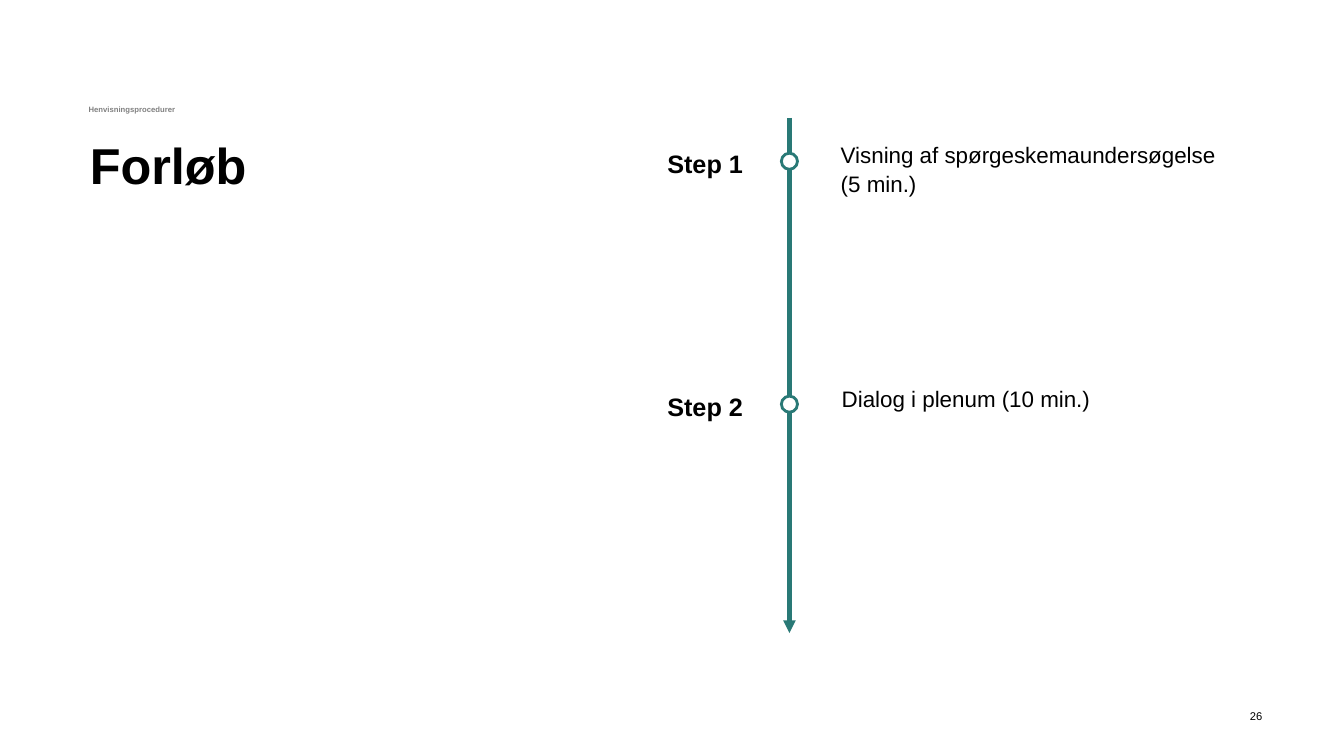
from lxml import etree
from pptx import Presentation
from pptx.dml.color import RGBColor
from pptx.enum.shapes import MSO_CONNECTOR, MSO_SHAPE
from pptx.enum.text import MSO_ANCHOR, MSO_AUTO_SIZE, PP_ALIGN
from pptx.oxml.ns import qn
from pptx.util import Inches, Pt

TEAL = RGBColor(0x29, 0x79, 0x76)
GREY = RGBColor(0x80, 0x80, 0x80)
BLACK = RGBColor(0, 0, 0)
WHITE = RGBColor(0xFF, 0xFF, 0xFF)

LEFT, RIGHT = PP_ALIGN.LEFT, PP_ALIGN.RIGHT
TOP, BOTTOM = MSO_ANCHOR.TOP, MSO_ANCHOR.BOTTOM
NO_AUTOFIT = MSO_AUTO_SIZE.NONE
STRAIGHT = MSO_CONNECTOR.STRAIGHT
OVAL = MSO_SHAPE.OVAL

AXIS_X = 7.83
DOT = 0.16
STEPS = [
    ("Step 1", 1.39, 1.52, "Visning af spørgeskemaundersøgelse (5 min.)", 8.24, 1.32),
    ("Step 2", 3.8, 3.93, "Dialog i plenum (10 min.)", 8.25, 3.75),
]


class TimelineSlide:
    font = "Arial"

    def __init__(self, prs):
        self.s = prs.slides.add_slide(prs.slide_layouts[5])

    def set_text(self, sp, text, size, color=BLACK, bold=False, align=LEFT,
                 anchor=TOP, spacing=1.0, after=0, inset=None):
        tf = sp.text_frame
        tf.word_wrap = True
        tf.auto_size = NO_AUTOFIT
        tf.vertical_anchor = anchor
        if inset is not None:
            tf.margin_left = tf.margin_right = Inches(inset)
            tf.margin_top = tf.margin_bottom = Inches(inset)
        p = tf.paragraphs[0]
        p.text = text
        p.alignment = align
        p.line_spacing = spacing
        p.space_after = Pt(after)
        p.font.name = self.font
        p.font.size = Pt(size)
        p.font.bold = bold
        p.font.color.rgb = color

    def title(self, text, x, y, w, h):
        sp = self.s.shapes.title
        sp.left, sp.top, sp.width, sp.height = map(Inches, (x, y, w, h))
        self.set_text(sp, text, 36, bold=True, spacing=0.9)

    def text(self, text, x, y, w, h, size, **style):
        sp = self.s.shapes.add_textbox(*map(Inches, (x, y, w, h)))
        self.set_text(sp, text, size, **style)

    def arrow(self, x, top, bottom):
        sp = self.s.shapes.add_connector(STRAIGHT, *map(Inches, (x, top, x, bottom)))
        sp.line.color.rgb = TEAL
        sp.line.width = Pt(3)
        spPr = sp._element.spPr
        etree.SubElement(spPr.find(qn("a:ln")), qn("a:tailEnd"), type="triangle")
        etree.SubElement(spPr, qn("a:effectLst"))

    def dot(self, x, y, size):
        sp = self.s.shapes.add_shape(OVAL, *map(Inches, (x, y, size, size)))
        sp.shadow.inherit = False
        sp.fill.solid()
        sp.fill.fore_color.rgb = WHITE
        sp.line.color.rgb = TEAL
        sp.line.width = Pt(2)


def main():
    prs = Presentation()
    prs.slide_width, prs.slide_height = Inches(13.33), Inches(7.5)
    slide = TimelineSlide(prs)
    slide.text("26", 11.74, 7.01, 0.81, 0.19, 8, align=RIGHT, anchor=BOTTOM, inset=0.03)
    slide.text("Henvisningsprocedurer", 0.78, 0.8, 4.8, 0.38, 5.5, color=GREY,
               bold=True, anchor=BOTTOM, spacing=0.9, after=12)
    slide.title("Forløb", 0.79, 1.35, 4.8, 0.64)
    slide.arrow(AXIS_X, 1.17, 6.28)
    for label, label_y, dot_y, detail, detail_x, detail_y in STEPS:
        slide.dot(AXIS_X - DOT / 2, dot_y, DOT)
        slide.text(label, 6.52, label_y, 1.15, 0.41, 18, bold=True, spacing=1.1, after=24)
        slide.text(detail, detail_x, detail_y, 4.01, 0.67, 16, spacing=1.1, after=6)
    prs.save("out.pptx")


if __name__ == "__main__":
    main()
